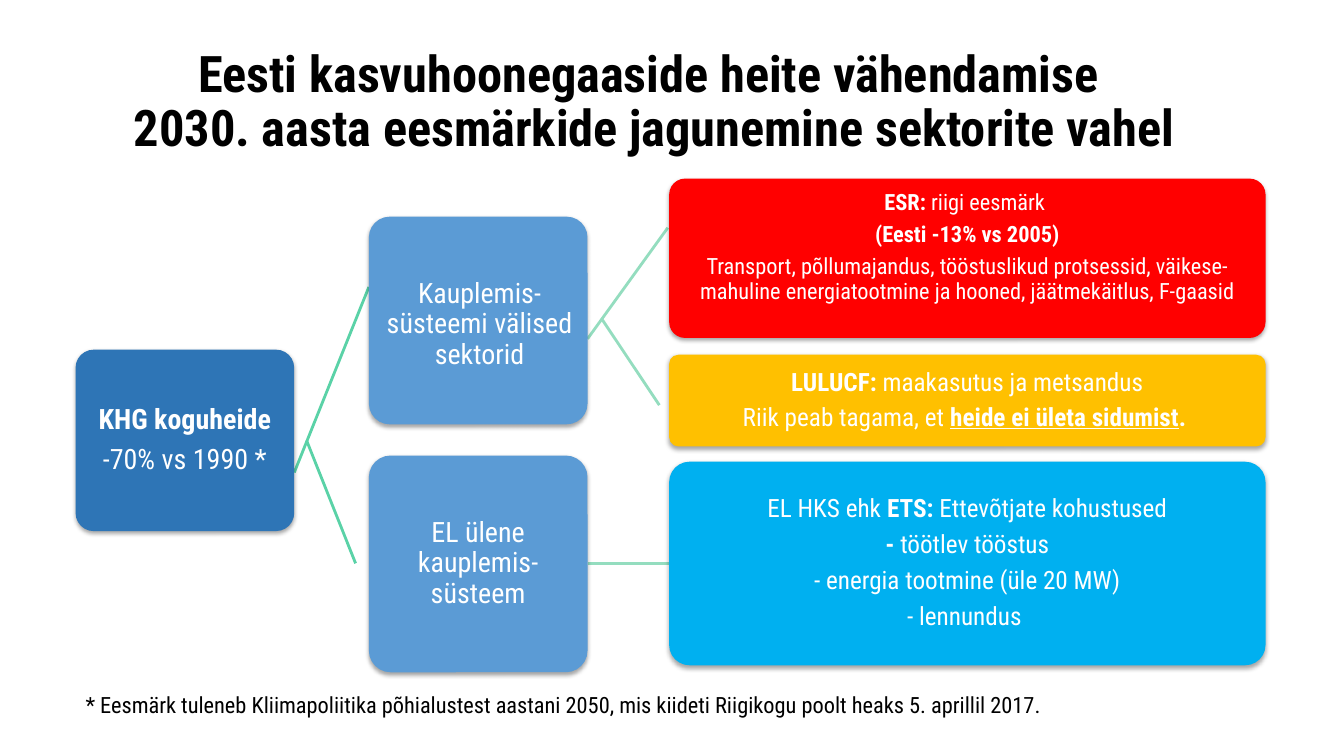
from collections import namedtuple

from lxml import etree
from pptx import Presentation
from pptx.dml.color import RGBColor
from pptx.enum.shapes import MSO_CONNECTOR, MSO_SHAPE
from pptx.enum.text import MSO_ANCHOR, PP_ALIGN
from pptx.oxml.ns import qn
from pptx.util import Pt

ROUNDED = MSO_SHAPE.ROUNDED_RECTANGLE
STRAIGHT = MSO_CONNECTOR.STRAIGHT
MIDDLE, TOP = MSO_ANCHOR.MIDDLE, MSO_ANCHOR.TOP
CENTER, LEFT = PP_ALIGN.CENTER, PP_ALIGN.LEFT

THEME = {
    "font": "Roboto Condensed",
    "text": "000000", "box text": "FFFFFF",
    "total": "2E75B6", "sector": "5B9BD5",
    "esr": "FF0000", "lulucf": "FFC000", "ets": "00B0F0",
    "first link": "5AD2A7", "second link": "94DDBF",
    "title size": 36, "note size": 16, "line width": 2,
}

# Runs are (text, style): "b" is bold, "u" is underlined.
TITLE = [[("Eesti kasvuhoonegaaside heite vähendamise \v"
           "2030. aasta eesmärkide jagunemine sektorite vahel", "b")]]
NOTE = [[("* Eesmärk tuleneb Kliimapoliitika põhialustest aastani 2050, "
          "mis kiideti Riigikogu poolt heaks 5. aprillil 2017.", "")]]

# Columns of the tree: left edge and width
TOTAL_COLUMN = (54, 156.2)
SECTOR_COLUMN = (263.5, 156.2)
TARGET_COLUMN = (478, 426)

Box = namedtuple("Box", "column top height color size gap insets paragraphs")
EVEN = (1, 1, 1, 1)
BOXES = [
    Box(TOTAL_COLUMN, 249.8, 129.6, "total", 20, 7, EVEN, [
        [("KHG koguheide", "b")],
        [("-70% vs 1990 *", "")],
    ]),
    Box(SECTOR_COLUMN, 154.8, 148.3, "sector", 20, 0, (2, 6, 0, 0), [
        [("Kauplemis-süsteemi välised sektorid", "")],
    ]),
    Box(SECTOR_COLUMN, 325.4, 154.8, "sector", 20, 0, EVEN, [
        [("EL ülene kauplemis- süsteem", "")],
    ]),
    Box(TARGET_COLUMN, 127.6, 113.8, "esr", 16, 5.6, (1, 0, 1, 15), [
        [("ESR: ", "b"), ("riigi eesmärk ", "")],
        [("(Eesti -13% vs 2005)", "b")],
        [("Transport, põllumajandus, tööstuslikud protsessid, väikese-mahuline "
          "energiatootmine ja hooned, jäätmekäitlus, F-gaasid", "")],
    ]),
    Box(TARGET_COLUMN, 253.4, 65.5, "lulucf", 18, 5.6, EVEN, [
        [("LULUCF: ", "b"), ("maakasutus ja metsandus", "")],
        [("Riik peab tagama, et ", ""), ("heide ei ületa sidumist", "bu"), (". ", "b")],
    ]),
    Box(TARGET_COLUMN, 329.8, 145.4, "ets", 18, 6.3, EVEN, [
        [("EL HKS ehk ", ""), ("ETS: ", "b"), ("Ettevõtjate kohustused", "")],
        [("- ", "b"), ("töötlev tööstus", "")],
        [("- energia tootmine (üle 20 MW)", "")],
        [("- lennundus ", "")],
    ]),
]

TOTAL_RIGHT, SECTOR_RIGHT = sum(TOTAL_COLUMN), sum(SECTOR_COLUMN)
SECTOR_LEFT, TARGET_LEFT = SECTOR_COLUMN[0], TARGET_COLUMN[0]
LINKS = [
    ("first link", TOTAL_RIGHT, 337.5, SECTOR_LEFT, 205),
    ("first link", 219, 314.6, 254, 402.4),
    ("second link", SECTOR_RIGHT, 242, TARGET_LEFT - 1, 162.7),
    ("second link", 430.3, 228.5, 471, 289.4),
    ("second link", SECTOR_RIGHT, 402.4, TARGET_LEFT, 402.4),
]


def color(name):
    return RGBColor.from_string(THEME[name])


def write(shape, paragraphs, size, ink, align, anchor, spacing=1.0, gap=0, insets=None):
    frame = shape.text_frame
    frame.word_wrap = True
    frame.vertical_anchor = anchor
    if insets:
        (frame.margin_left, frame.margin_top,
         frame.margin_right, frame.margin_bottom) = map(Pt, insets)
    for index, runs in enumerate(paragraphs):
        para = frame.add_paragraph() if index else frame.paragraphs[0]
        para.alignment = align
        para.line_spacing = spacing
        para.space_before = Pt(gap if index else 0)
        para.text = "".join(text for text, style in runs) if len(runs) == 1 else ""
        spans = para.runs or [para.add_run() for run in runs]
        for number, span in enumerate(spans):
            text, style = runs[min(number, len(runs) - 1)]
            if len(runs) > 1:
                span.text = text
            span.font.name = THEME["font"]
            span.font.size = Pt(size)
            span.font.bold = "b" in style
            span.font.underline = "u" in style
            span.font.color.rgb = color(ink)


def cast_shadow(shape):
    """Give the shape a soft black shadow straight below it."""
    shape.shadow.inherit = False
    effects = shape._element.spPr.find(qn("a:effectLst"))
    shadow = etree.SubElement(effects, qn("a:outerShdw"), blurRad=str(Pt(3.1)),
                              dist=str(Pt(1.8)), dir="5400000", rotWithShape="0")
    black = etree.SubElement(shadow, qn("a:srgbClr"), val="000000")
    etree.SubElement(black, qn("a:alpha"), val="35000")


def add_box(slide, box):
    left, width = box.column
    shape = slide.shapes.add_shape(ROUNDED, Pt(left), Pt(box.top), Pt(width), Pt(box.height))
    shape.adjustments[0] = 0.1
    shape.fill.solid()
    shape.fill.fore_color.rgb = color(box.color)
    shape.line.fill.background()
    cast_shadow(shape)
    write(shape, box.paragraphs, box.size, "box text", CENTER, MIDDLE,
          0.9, box.gap, box.insets)


def add_link(slide, name, *ends):
    link = slide.shapes.add_connector(STRAIGHT, *map(Pt, ends))
    link.line.color.rgb = color(name)
    link.line.width = Pt(THEME["line width"])
    etree.SubElement(link._element.spPr, qn("a:effectLst"))


def main():
    deck = Presentation()
    deck.slide_width, deck.slide_height = Pt(960), Pt(540)
    slide = deck.slides.add_slide(deck.slide_layouts[6])

    title = slide.shapes.add_textbox(Pt(30), Pt(24), Pt(875), Pt(99))
    write(title, TITLE, THEME["title size"], "text", CENTER, MIDDLE, 0.9)
    for link in LINKS:
        add_link(slide, *link)
    for box in BOXES:
        add_box(slide, box)
    note = slide.shapes.add_textbox(Pt(54), Pt(490.3), Pt(851), Pt(26.6))
    write(note, NOTE, THEME["note size"], "text", LEFT, TOP)

    deck.save("out.pptx")


if __name__ == "__main__":
    main()
